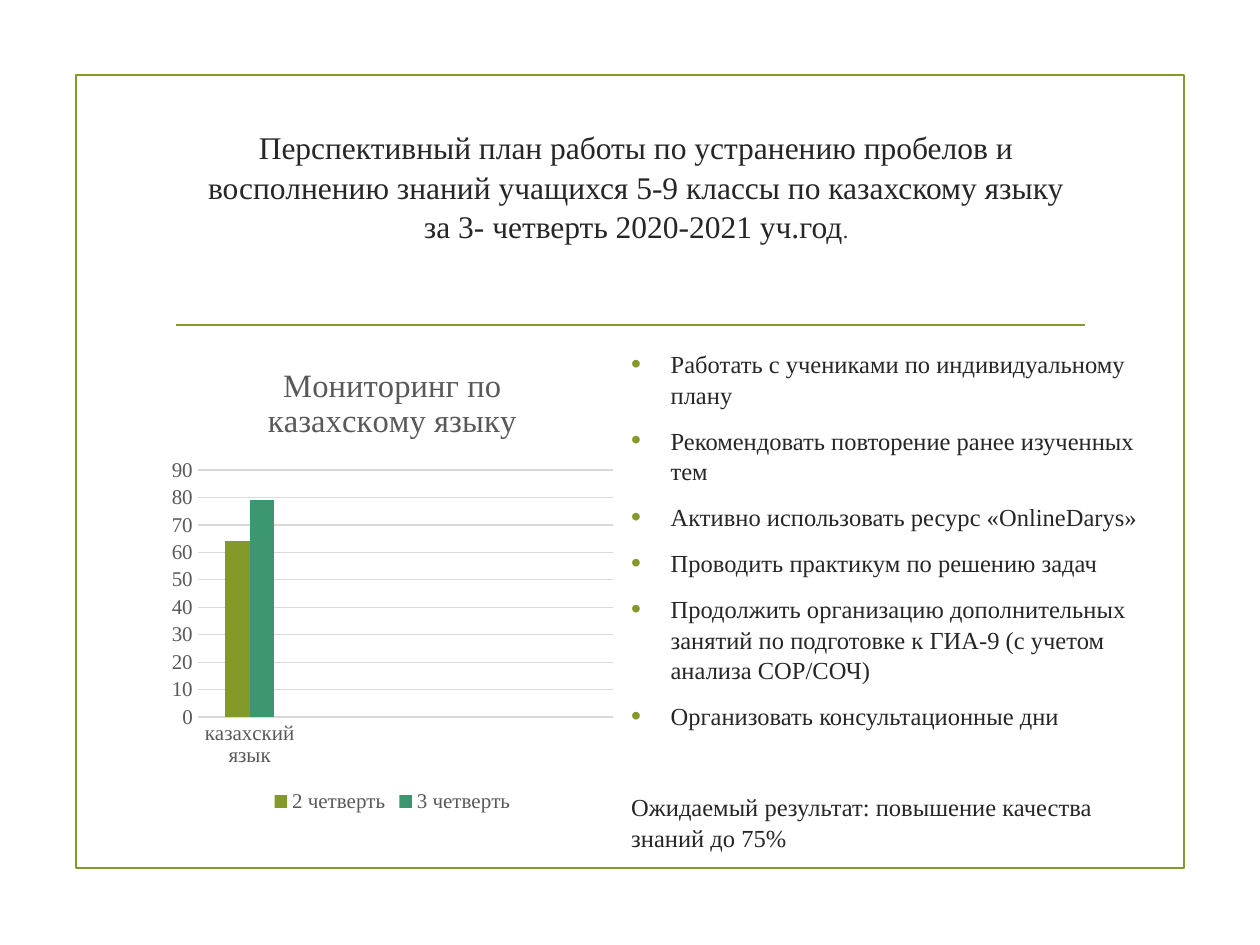
from lxml import etree
from pptx import Presentation
from pptx.chart.data import CategoryChartData
from pptx.dml.color import RGBColor
from pptx.enum.chart import XL_CHART_TYPE, XL_LEGEND_POSITION, XL_TICK_MARK
from pptx.enum.shapes import MSO_CONNECTOR, MSO_SHAPE
from pptx.enum.text import MSO_ANCHOR, MSO_AUTO_SIZE, PP_ALIGN
from pptx.oxml.ns import qn
from pptx.util import Pt

OLIVE, GREEN, INK, GREY, GRID = "83992A", "3C9770", "262626", "595959", "D9D9D9"
TYPEFACE = "Times New Roman"


def rgb(hex_colour):
    return RGBColor.from_string(hex_colour)


def style(font, size, colour):
    font.name = TYPEFACE
    font.size = Pt(size)
    font.bold = False
    font.color.rgb = rgb(colour)


presentation = Presentation()
presentation.slide_width, presentation.slide_height = Pt(720), Pt(540)
slide = presentation.slides.add_slide(presentation.slide_layouts[1])
heading, plan = slide.placeholders

# Frame and rule
frame = slide.shapes.add_shape(MSO_SHAPE.RECTANGLE, Pt(43.5), Pt(42.75), Pt(633), Pt(453.5))
frame.shadow.inherit = False
frame.fill.background()
rule = slide.shapes.add_connector(MSO_CONNECTOR.STRAIGHT, Pt(100.5), Pt(185.75), Pt(620), Pt(185.75))
etree.SubElement(rule._element.spPr, qn("a:effectLst"))
for outline in (frame.line, rule.line):
    outline.color.rgb = rgb(OLIVE)
    outline.width = Pt(1.25)

# Heading
heading.left, heading.top, heading.width, heading.height = Pt(95.75), Pt(54.75), Pt(535.5), Pt(103)
heading.text_frame.auto_size = MSO_AUTO_SIZE.NONE
heading.text_frame.vertical_anchor = MSO_ANCHOR.MIDDLE
heading_line = heading.text_frame.paragraphs[0]
heading_line.alignment = PP_ALIGN.CENTER
heading_line.line_spacing = 1.04
for words, size in (
    ("Перспективный план работы по устранению пробелов и восполнению знаний "
     "учащихся 5-9 классы по казахскому языку\vза 3- четверть 2020-2021 уч.год", 18),
    (".", 12.6),
):
    for index, part in enumerate(words.split("\v")):
        if index:
            heading_line.add_line_break()
        run = heading_line.add_run()
        run.text = part
        style(run.font, size, INK)

# Monitoring chart: only the first of four categories is filled
results = CategoryChartData()
results.categories = ["казахский язык", "", "", ""]
results.add_series("2 четверть", [64, None, None, None])
results.add_series("3 четверть", [79, None, None, None])
chart = slide.shapes.add_chart(
    XL_CHART_TYPE.COLUMN_CLUSTERED, Pt(92.9), Pt(195.85), Pt(262.8), Pt(271.45), results
).chart
style(chart.font, 12, GREY)

chart.has_title = True
chart_title = chart.chart_title.text_frame.paragraphs[0].add_run()
chart_title.text = "Мониторинг по казахскому языку"
style(chart_title.font, 18.6, GREY)
chart.chart_title.include_in_layout = False

chart.has_legend = True
chart.legend.position = XL_LEGEND_POSITION.BOTTOM
chart.legend.include_in_layout = False
style(chart.legend.font, 12, GREY)

for axis in (chart.category_axis, chart.value_axis):
    axis.major_tick_mark = axis.minor_tick_mark = XL_TICK_MARK.NONE
    style(axis.tick_labels.font, 12, GREY)
chart.value_axis.format.line.fill.background()
chart.value_axis.minimum_scale, chart.value_axis.maximum_scale = 0, 90
chart.value_axis.major_unit = 10
for line in (chart.category_axis.format.line, chart.value_axis.major_gridlines.format.line):
    line.color.rgb = rgb(GRID)
    line.width = Pt(0.75)

columns = chart.plots[0]
columns.gap_width, columns.overlap = 219, 0
columns.vary_by_categories = False
for quarter, colour in zip(columns.series, (OLIVE, GREEN)):
    quarter.format.fill.solid()
    quarter.format.fill.fore_color.rgb = rgb(colour)

# Plan and expected result
plan.left, plan.top, plan.width, plan.height = Pt(353.5), Pt(144), Pt(306), Pt(342.75)
plan.text_frame.auto_size = MSO_AUTO_SIZE.NONE
plan.text_frame.vertical_anchor = MSO_ANCHOR.TOP
plan.text_frame.margin_top = Pt(54.8)
steps = [
    "Работать с учениками по индивидуальному плану",
    "Рекомендовать повторение ранее изученных тем",
    "Активно использовать ресурс «OnlineDarys»",
    "Проводить практикум по решению задач",
    "Продолжить организацию дополнительных занятий по подготовке к ГИА-9 (с учетом анализа СОР/СОЧ)",
    "Организовать консультационные дни",
]
expected_result = "Ожидаемый результат: повышение качества знаний до 75%"
for index, words in enumerate(steps + [expected_result]):
    is_step = index < len(steps)
    paragraph = plan.text_frame.paragraphs[0] if index == 0 else plan.text_frame.add_paragraph()
    paragraph.line_spacing = 1.04
    paragraph.space_before = Pt(0 if index == 0 else 2.8 if is_step else 28.4)
    paragraph.space_after = Pt(6)
    properties = paragraph._p.get_or_add_pPr()
    indent = Pt(22.5) if is_step else 0
    properties.set("marL", str(indent))
    properties.set("indent", str(-indent))
    if is_step:
        bullet_colour = etree.SubElement(properties, qn("a:buClr"))
        etree.SubElement(bullet_colour, qn("a:srgbClr"), val=OLIVE)
        etree.SubElement(properties, qn("a:buSzPct"), val="115000")
        etree.SubElement(properties, qn("a:buFont"), typeface="Arial")
        etree.SubElement(properties, qn("a:buChar"), char="•")
    else:
        etree.SubElement(properties, qn("a:buNone"))
    run = paragraph.add_run()
    run.text = words
    style(run.font, 14, INK)

presentation.save("out.pptx")
